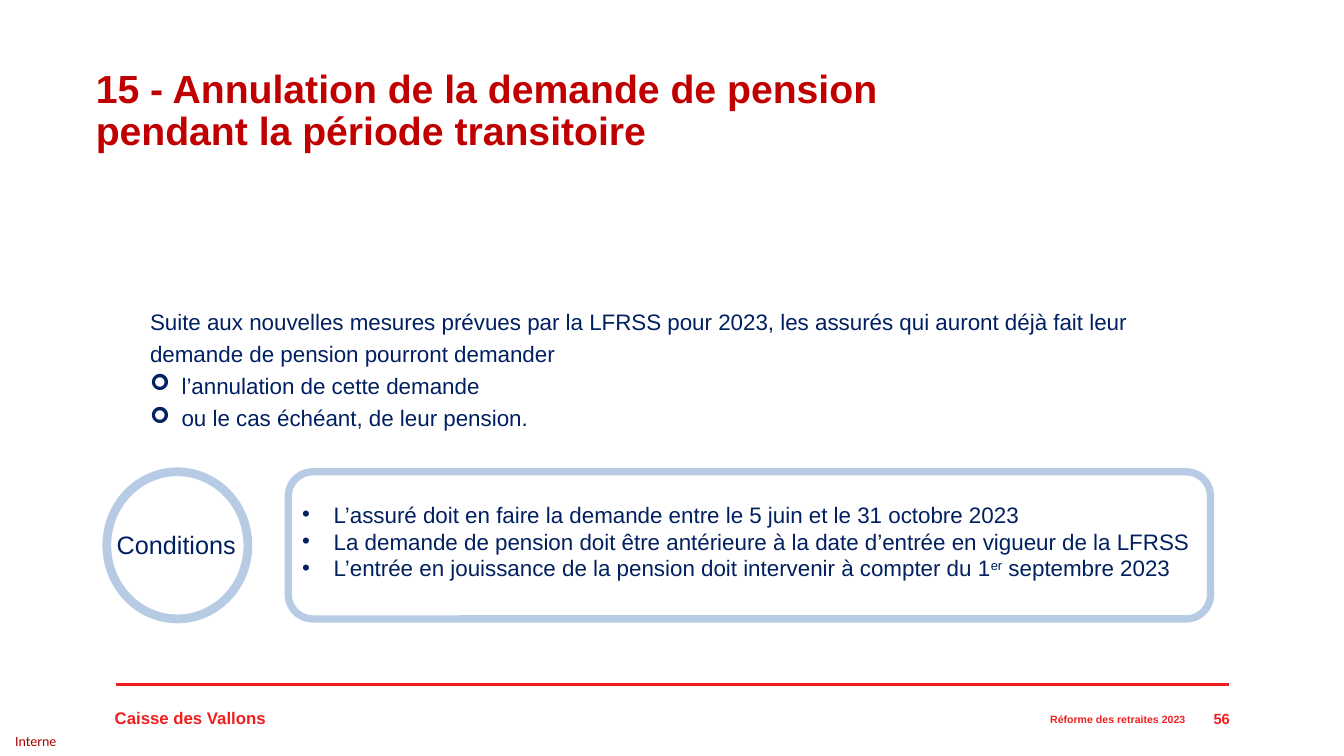
from lxml import etree
from pptx import Presentation
from pptx.dml.color import RGBColor
from pptx.enum import shapes, text
from pptx.oxml.ns import qn
from pptx.util import Pt

HUES = {"red": "F01E1E", "title": "C00000", "navy": "002060",
        "dark": "A80000", "ring": "B7CBE4"}
RIGHT = text.PP_ALIGN.RIGHT
MID = text.MSO_ANCHOR.MIDDLE
TOP = text.MSO_ANCHOR.TOP


def hue(name):
    """Return the named colour."""
    return RGBColor.from_string(HUES[name])


def style(run, size, color, bold=False, font="Arial"):
    """Format one run."""
    run.font.size = Pt(size)
    run.font.name = font
    run.font.bold = bold
    run.font.color.rgb = hue(color)


def mark(para, sign, font):
    """Give a paragraph a hanging bullet."""
    props = para._p.get_or_add_pPr()
    props.set("marL", str(Pt(22.5)))
    props.set("indent", str(-Pt(22.5)))
    etree.SubElement(props, qn("a:buFont")).set("typeface", font)
    etree.SubElement(props, qn("a:buChar")).set("char", sign)


def fill(frame, lines, align=None, anchor=TOP, wrap=True, space=None,
         sign=None, face="Arial", first=0, **form):
    """Write lines into a frame; a tuple line has a raised second part."""
    frame.word_wrap = wrap
    frame.vertical_anchor = anchor
    frame.auto_size = text.MSO_AUTO_SIZE.NONE
    for i, line in enumerate(lines):
        para = frame.add_paragraph() if i else frame.paragraphs[0]
        para.alignment = align
        para.line_spacing = space
        if sign and i >= first:
            mark(para, sign, face)
        parts = line if isinstance(line, tuple) else (line,)
        for j, part in enumerate(parts):
            run = para.add_run()
            run.text = part
            style(run, **form)
            if j == 1:
                run.font._element.set("baseline", "30000")


def label(slide, box, *lines, **form):
    """Add a text box."""
    frame = slide.shapes.add_textbox(*map(Pt, box)).text_frame
    fill(frame, lines, **form)
    return frame


def ring(slide, kind, box, width):
    """Add an unfilled outline shape."""
    shape = slide.shapes.add_shape(kind, *map(Pt, box))
    shape.shadow.inherit = False
    shape.fill.background()
    shape.line.color.rgb = hue("ring")
    shape.line.width = Pt(width)


def rule(slide, left, right, y):
    """Add the red footer line."""
    line = slide.shapes.add_connector(
        shapes.MSO_CONNECTOR.STRAIGHT, Pt(left), Pt(y), Pt(right), Pt(y))
    line.line.color.rgb = hue("red")
    line.line.width = Pt(2)
    etree.SubElement(line._element.spPr, qn("a:effectLst"))


def head(slide, box, words):
    """Place and format the title."""
    title = slide.shapes.title
    title.left, title.top, title.width, title.height = map(Pt, box)
    fill(title.text_frame, [words], align=text.PP_ALIGN.LEFT, space=0.9,
         size=28, color="title", bold=True)


def foot(slide):
    """Add the footer line and its labels."""
    rule(slide, 82.8, 877.7, 488.9)
    bold = {"color": "red", "bold": True}
    label(slide, (74.9, 501.8, 122.4, 21.6), "Caisse des Vallons",
          wrap=False, size=12, **bold)
    tag = label(slide, (0, 519.1, 51.1, 20.9), "Interne", anchor=MID,
                align=text.PP_ALIGN.CENTER, size=10, color="dark",
                font="Calibri")
    tag.margin_left = tag.margin_right = tag.margin_top = tag.margin_bottom = 0
    label(slide, (570.2, 504, 283.7, 20.2), "Réforme des retraites 2023",
          align=RIGHT, anchor=MID, size=7.5, **bold)
    label(slide, (843.1, 501.8, 42.5, 22.3), "56",
          align=RIGHT, anchor=MID, size=10.5, **bold)


def main():
    """Build and save the slide."""
    deck = Presentation()
    deck.slide_width, deck.slide_height = Pt(960), Pt(540)
    slide = deck.slides.add_slide(deck.slide_layouts[5])
    foot(slide)
    head(slide, (61.2, 46.1, 619.2, 54),
         "15 - Annulation de la demande de pension pendant la période "
         "transitoire")
    label(slide, (100.1, 212.4, 743, 108.7),
          "Suite aux nouvelles mesures prévues par la LFRSS pour 2023, les "
          "assurés qui auront déjà fait leur demande de pension pourront "
          "demander",
          "l’annulation de cette demande",
          "ou le cas échéant, de leur pension.",
          space=1.2, sign="➢", face="Wingdings", first=1,
          size=16, color="navy")
    label(slide, (76.3, 374.4, 108, 28.8), "Conditions",
          size=18, color="navy")
    ring(slide, shapes.MSO_SHAPE.ROUNDED_RECTANGLE,
         (205.9, 337, 658.8, 105.1), 5.25)
    label(slide, (208.8, 354.2, 650.9, 65.5),
          "L’assuré doit en faire la demande entre le 5 juin et le "
          "31 octobre 2023",
          "La demande de pension doit être antérieure à la date d’entrée en "
          "vigueur de la LFRSS",
          ("L’entrée en jouissance de la pension doit intervenir à compter "
           "du 1", "er", " septembre 2023"),
          sign="•", size=16, color="navy")
    ring(slide, shapes.MSO_SHAPE.OVAL, (76.3, 337, 100.8, 105.1), 6.25)
    deck.save("out.pptx")


if __name__ == "__main__":
    main()
